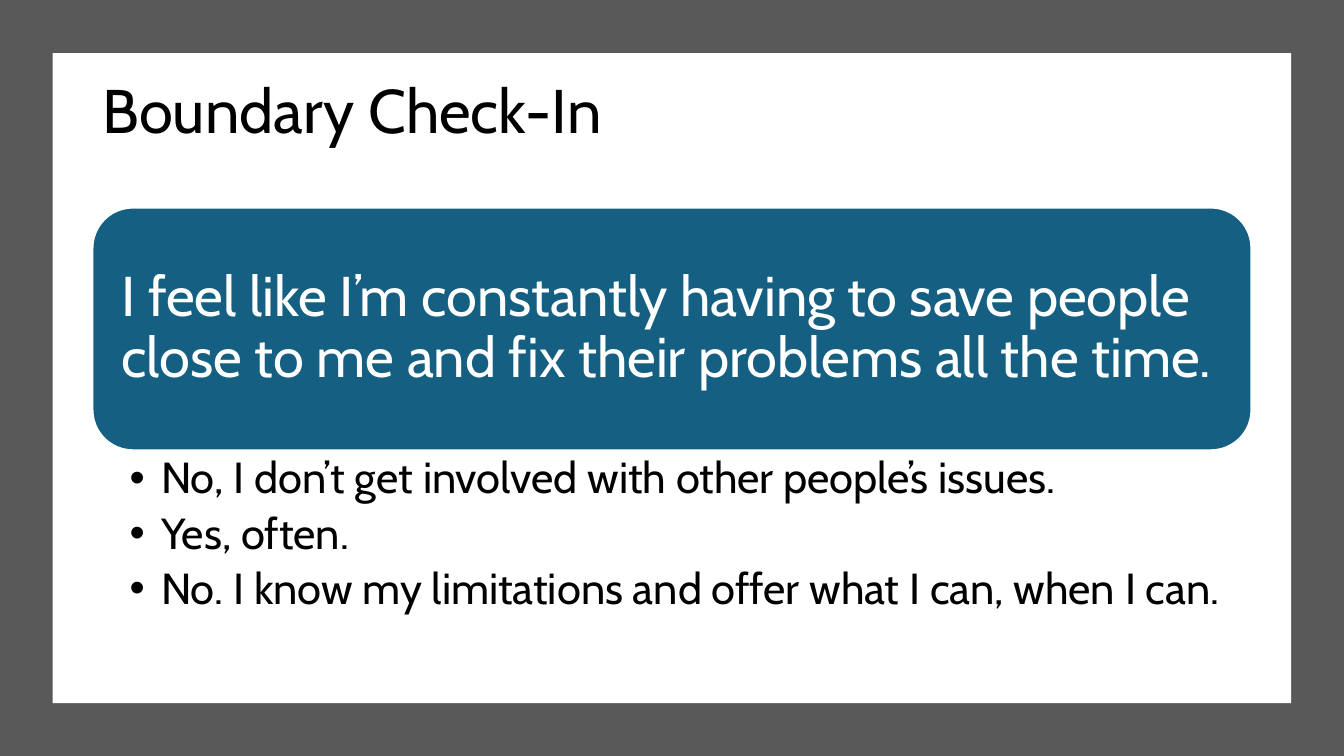
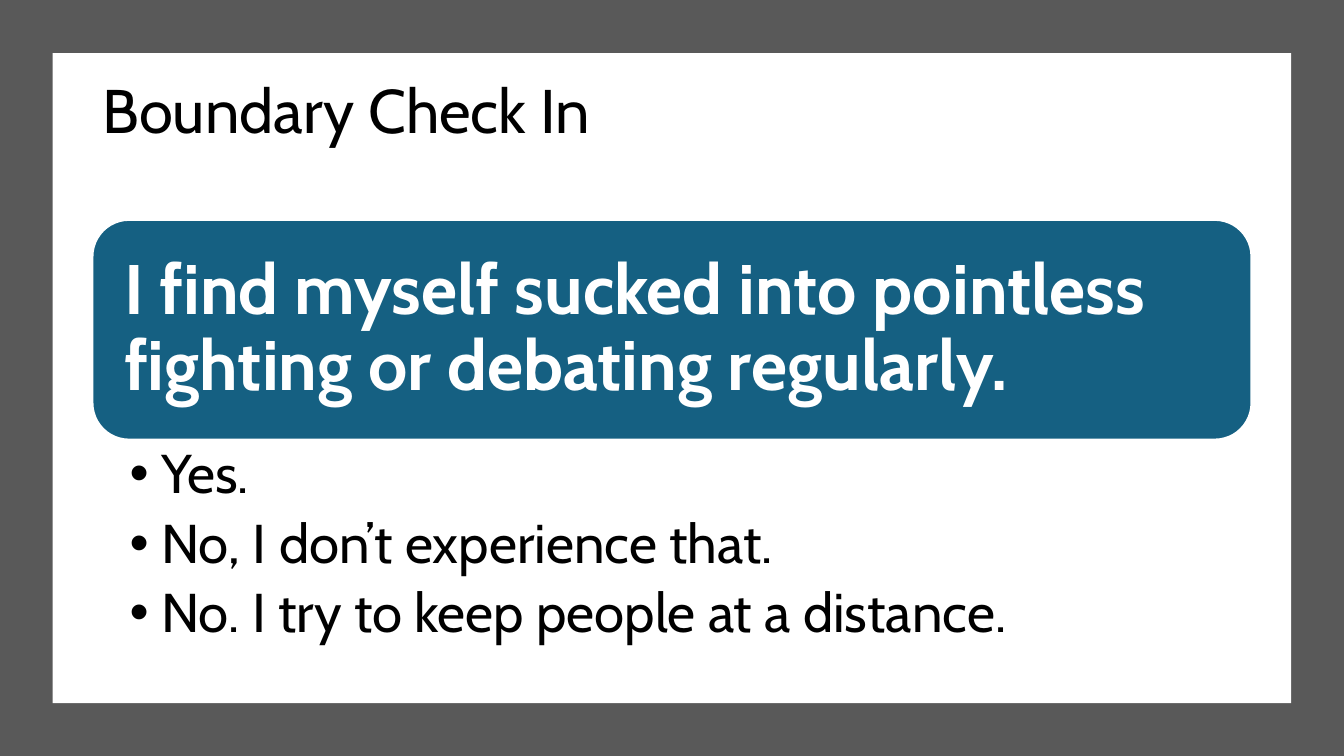
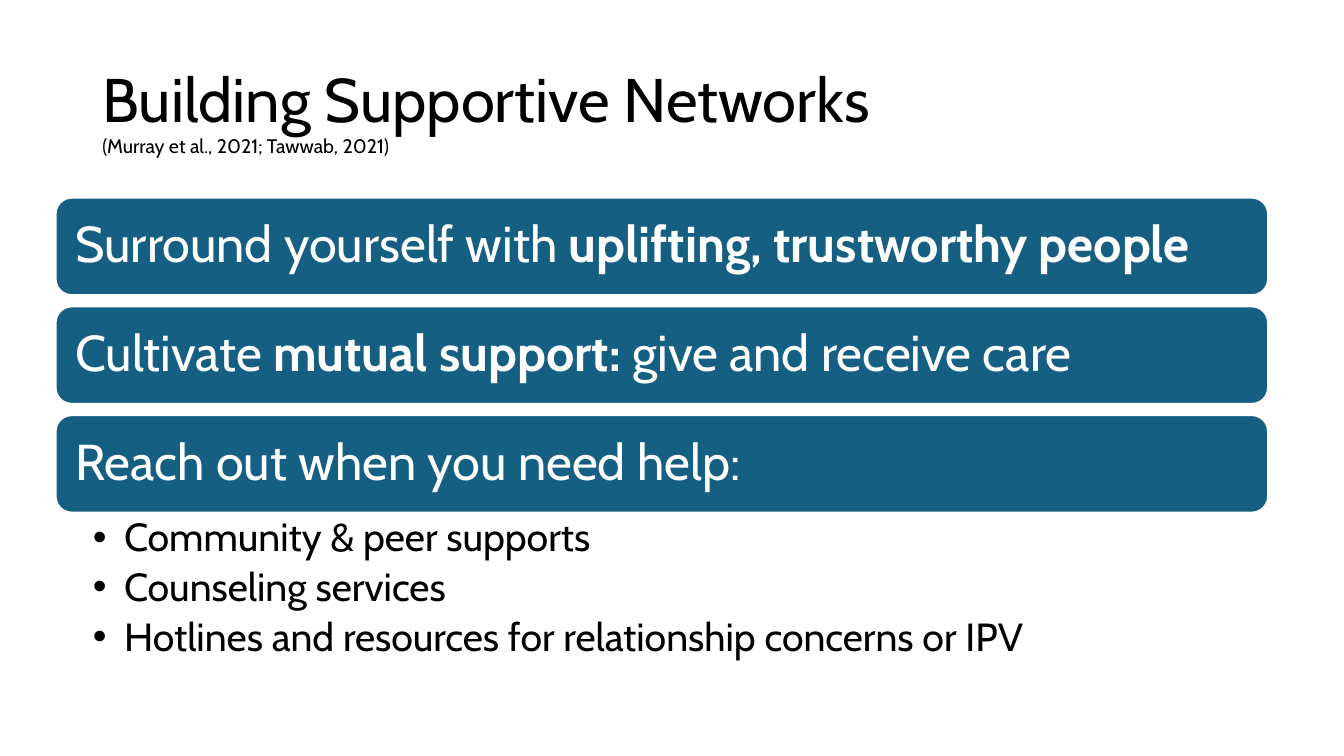
from dataclasses import dataclass

from lxml import etree
from pptx import Presentation
from pptx.dml.color import RGBColor as RGB
from pptx.enum.shapes import MSO_SHAPE as SHAPE
from pptx.enum.text import MSO_ANCHOR as ANCHOR, PP_ALIGN as ALIGN
from pptx.oxml.ns import qn
from pptx.util import Cm, Pt


@dataclass(frozen=True)
class Theme:
    font: str = "Cabin"
    white: RGB = RGB.from_string("FFFFFF")
    black: RGB = RGB.from_string("000000")
    frame: RGB = RGB.from_string("595959")
    accent: RGB = RGB.from_string("156082")
    title: int = 44
    citation: int = 14
    bar_line: float = 1.5
    line_spacing: float = 0.9
    bullet_gap: float = 0.19
    bullet_indent: float = 0.79


T = Theme()
W, H = 33.87, 19.05
GAP = 0.28


def add_box(s, at, kind=None, fill=None, line=None, inset=(0.25, 0.13, 0.25, 0.13),
            anchor=ANCHOR.MIDDLE):
    place = [Cm(v) for v in at]
    if kind is None:
        sp = s.shapes.add_textbox(*place)
    else:
        sp = s.shapes.add_shape(kind, *place)
        sp.shadow.inherit = False
        sp.fill.solid()
        sp.fill.fore_color.rgb = fill
        if line is None:
            sp.line.fill.background()
        else:
            sp.line.color.rgb = line
            sp.line.width = Pt(T.bar_line)
    tf = sp.text_frame
    tf.word_wrap = True
    tf.vertical_anchor = anchor
    tf.margin_left, tf.margin_top, tf.margin_right, tf.margin_bottom = [Cm(v) for v in inset]
    return tf


def write(tf, text, size, color=T.black, bold=False, bullet=False, new=False):
    p = tf.add_paragraph() if new else tf.paragraphs[-1]
    p.alignment = ALIGN.LEFT
    p.line_spacing = T.line_spacing
    if bullet:
        p.space_after = Pt(round(size * T.bullet_gap, 1))
        pPr = p._p.get_or_add_pPr()
        pPr.set("marL", str(Cm(T.bullet_indent)))
        pPr.set("indent", str(-Cm(T.bullet_indent)))
        etree.SubElement(pPr, qn("a:buFont")).set("typeface", "Arial")
        etree.SubElement(pPr, qn("a:buChar")).set("char", "•")
    r = p.add_run()
    r.text = text
    r.font.name = T.font
    r.font.size = Pt(size)
    r.font.bold = bold
    r.font.color.rgb = color
    return p


SLIDES = [
    dict(
        title="Boundary Check-In", citation=None, framed=True,
        left=2.33, top=5.23, width=29.21, bar_height=6.12, bar_size=40, bar_inset=0.43,
        bars=[[("I feel like I’m constantly having to save people close to me "
                "and fix their problems all the time.", False)]],
        list_height=5.64, list_size=31, list_inset=0.15,
        bullets=["No, I don’t get involved with other people’s issues.",
                 "Yes, often.",
                 "No. I know my limitations and offer what I can, when I can."],
    ),
    dict(
        title="Boundary Check In", citation=None, framed=True,
        left=2.33, top=5.54, width=29.21, bar_height=5.54, bar_size=50, bar_inset=0.53,
        bars=[[("I find myself sucked into pointless fighting or debating regularly.", True)]],
        list_height=5.61, list_size=39, list_inset=0.18,
        bullets=["Yes.",
                 "No, I don’t experience that.",
                 "No. I try to keep people at a distance."],
    ),
    dict(
        title="Building Supportive Networks", citation="(Murray et al., 2021; Tawwab, 2021)",
        framed=False,
        left=1.4, top=4.98, width=30.56, bar_height=2.46, bar_size=36, bar_inset=0.38,
        bars=[[("Surround yourself with ", False), ("uplifting, trustworthy people", True)],
              [("Cultivate ", False), ("mutual support: ", True),
               ("give and receive care", False)],
              [("Reach out when you need help:", False)]],
        list_height=4.04, list_size=28, list_inset=0.13,
        bullets=["Community & peer supports",
                 "Counseling services",
                 "Hotlines and resources for relationship concerns or IPV"],
    ),
]

prs = Presentation()
prs.slide_width, prs.slide_height = Cm(W), Cm(H)

for d in SLIDES:
    s = prs.slides.add_slide(prs.slide_layouts[6])
    if d["framed"]:
        add_box(s, (0, 0, W, H), SHAPE.RECTANGLE, T.frame)
        add_box(s, (1.33, 1.34, 31.21, 16.38), SHAPE.RECTANGLE, T.white)

    tf = add_box(s, (2.33, 1.02, 29.21, 3.68))
    p = write(tf, d["title"], T.title)
    if d["citation"]:
        p.add_line_break()
        write(tf, d["citation"], T.citation)

    y = d["top"]
    for runs in d["bars"]:
        tf = add_box(s, (d["left"], y, d["width"], d["bar_height"]), SHAPE.ROUNDED_RECTANGLE,
                     T.accent, T.white, inset=[d["bar_inset"]] * 4)
        for text, bold in runs:
            write(tf, text, d["bar_size"], T.white, bold)
        y += d["bar_height"] + GAP

    inset = (0.94, d["list_inset"], 0.75, d["list_inset"])
    tf = add_box(s, (d["left"], y - GAP, d["width"], d["list_height"]),
                 inset=inset, anchor=ANCHOR.TOP)
    for i, text in enumerate(d["bullets"]):
        write(tf, text, d["list_size"], bullet=True, new=i > 0)

prs.save("out.pptx")
